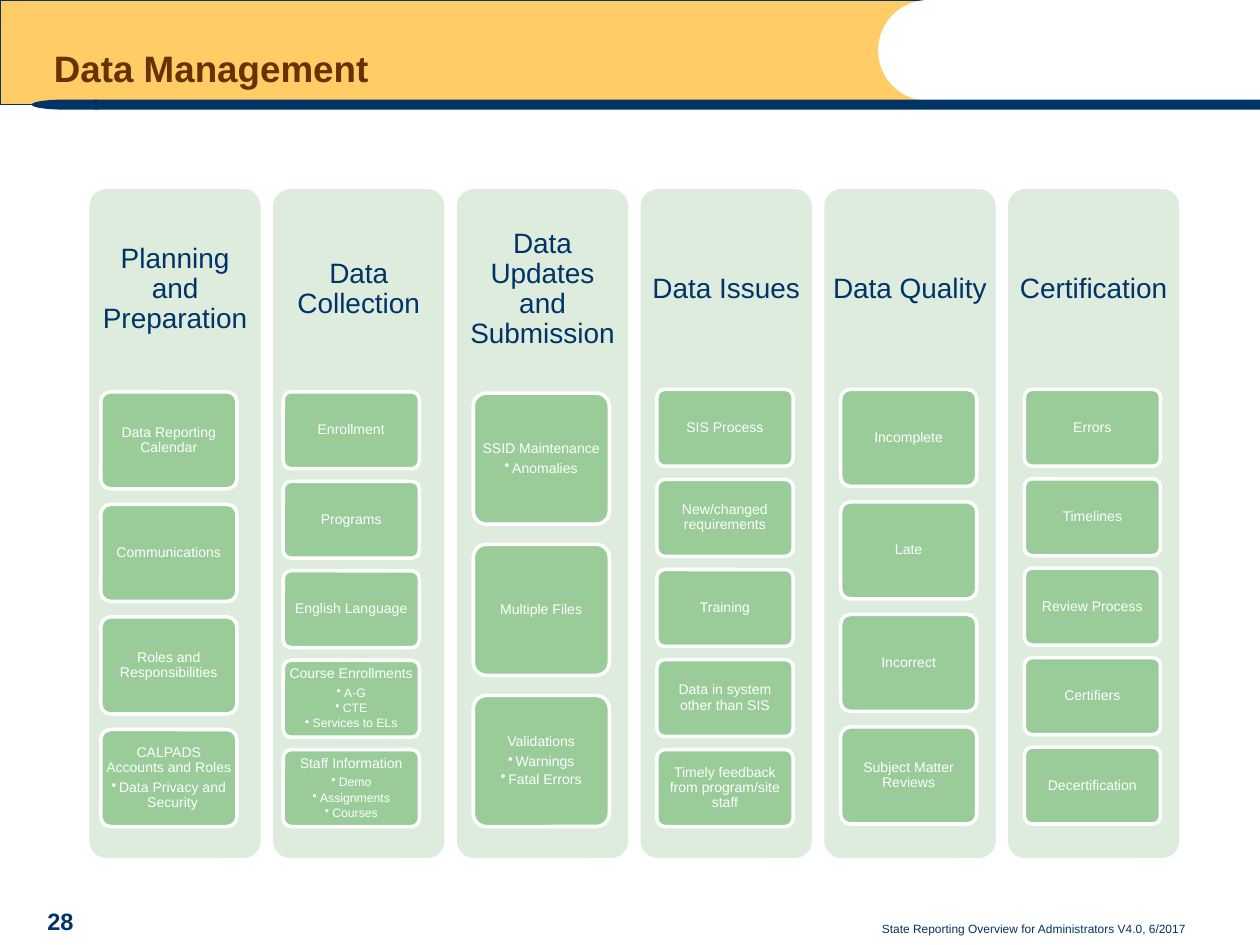
from lxml.etree import SubElement
from pptx import Presentation
from pptx.dml.color import RGBColor
from pptx.enum.shapes import MSO_SHAPE as Shape
from pptx.enum.text import MSO_ANCHOR as Anchor, PP_ALIGN as Align
from pptx.oxml.ns import qn
from pptx.util import Inches, Pt

COLORS = {
    "gold": "FFCC66", "navy": "003366", "brown": "663300",
    "white": "FFFFFF", "pale": "DEECDE", "green": "99CC99",
}
CARD_HIGH = {3: 1.04, 4: 0.77, 5: 0.61}

# Heading, card inset from the column's left, first and last card top from the
# column's top, and cards as (label, bullets).
COLUMNS = [
    ("Planning and Preparation", 0.09, 1.61, 4.29, [
        ("Data Reporting Calendar", []),
        ("Communications", []),
        ("Roles and Responsibilities", []),
        ("CALPADS Accounts and Roles", ["Data Privacy and Security"])]),
    ("Data Collection", 0.08, 1.61, 4.45, [
        ("Enrollment", []),
        ("Programs", []),
        ("English Language", []),
        ("Course Enrollments", ["A-G", "CTE", "Services to ELs"]),
        ("Staff Information", ["Demo", "Assignments", "Courses"])]),
    ("Data Updates and Submission", 0.13, 1.62, 4.02, [
        ("SSID Maintenance", ["Anomalies"]),
        ("Multiple Files", []),
        ("Validations", ["Warnings", "Fatal Errors"])]),
    ("Data Issues", 0.13, 1.59, 4.45, [
        ("SIS Process", []),
        ("New/changed requirements", []),
        ("Training", []),
        ("Data in system other than SIS", []),
        ("Timely feedback from program/site staff", [])]),
    ("Data Quality", 0.13, 1.59, 4.27, [
        ("Incomplete", []),
        ("Late", []),
        ("Incorrect", []),
        ("Subject Matter Reviews", [])]),
    ("Certification", 0.13, 1.59, 4.43, [
        ("Errors", []),
        ("Timelines", []),
        ("Review Process", []),
        ("Certifiers", []),
        ("Decertification", [])]),
]


def color(name):
    return RGBColor.from_string(COLORS[name])


def add_box(slide, kind, box, fill, line=None, width=0.75, adj=None):
    shape = slide.shapes.add_shape(kind, *map(Inches, box))
    shape.shadow.inherit = False
    shape.fill.solid()
    shape.fill.fore_color.rgb = color(fill)
    if line:
        shape.line.color.rgb = color(line)
        shape.line.width = Pt(width)
    else:
        shape.line.fill.background()
    if adj is not None:
        shape.adjustments[0] = adj
    return shape


def set_frame(shape, anchor, inset=None):
    frame = shape.text_frame
    frame.word_wrap = True
    frame.vertical_anchor = anchor
    if inset is not None:
        for side in ("left", "top", "right", "bottom"):
            setattr(frame, f"margin_{side}", Inches(inset))
    return frame


def write(para, text, font, **layout):
    """Fill a paragraph; font is (size, colour, bold)."""
    for key, value in layout.items():
        setattr(para, key, value)
    run = para.add_run()
    run.text = text
    size, tint, bold = font
    for key, value in {"name": "Arial", "size": Pt(size), "bold": bold}.items():
        setattr(run.font, key, value)
    run.font.color.rgb = color(tint)


def add_label(slide, box, text, font, anchor=Anchor.BOTTOM, inset=None, **layout):
    shape = slide.shapes.add_textbox(*map(Inches, box))
    frame = set_frame(shape, anchor, inset)
    write(frame.paragraphs[0], text, font, **layout)


def add_bullet(para):
    props = para._p.get_or_add_pPr()
    indent = Inches(0.06)
    props.set("marL", str(indent))
    props.set("indent", str(-indent))
    SubElement(props, qn("a:buChar")).set("char", "•")


def add_banner(slide, box, title):
    left, top, wide, high = box
    bar = top + high - 0.08
    add_box(slide, Shape.RECTANGLE, (left, top, 7.33, high - 0.04), "gold", "navy")
    add_box(slide, Shape.OVAL, (left + 6.97, top, 0.8, 0.8), "white")
    add_box(slide, Shape.RECTANGLE, (left + 0.75, bar, wide - 0.75, 0.08), "navy")
    cap = add_box(slide, Shape.FLOWCHART_DELAY, (left + 0.25, bar, 0.52, 0.08), "navy")
    cap.rotation = 180
    add_label(slide, (left + 0.33, top + 0.19, 6, 0.58), title,
              (21, "brown", True), line_spacing=0.9)


def add_card(slide, box, label, bullets):
    card = add_box(slide, Shape.ROUNDED_RECTANGLE, box, "green", "white", 2, 0.1)
    frame = set_frame(card, Anchor.MIDDLE, 0.02)
    layout = {"alignment": Align.CENTER, "line_spacing": 0.9}
    write(frame.paragraphs[0], label, (8, "white", False),
          space_after=Pt(2.8), **layout)
    size = 7 if len(bullets) > 2 else 8
    for text in bullets:
        para = frame.add_paragraph()
        add_bullet(para)
        write(para, text, (size, "white", False), level=1,
              space_after=Pt(1.2), **layout)


def add_column(slide, box, heading, inset, first, last, cards):
    left, top, wide, high = box
    add_box(slide, Shape.ROUNDED_RECTANGLE, box, "pale", adj=0.1)
    add_label(slide, (left, top, wide, 0.3 * high), heading, (16, "navy", False),
              Anchor.MIDDLE, 0.07, alignment=Align.CENTER, line_spacing=0.9)
    step = (last - first) / (len(cards) - 1)
    for row, (label, bullets) in enumerate(cards):
        place = (left + inset, top + first + row * step, 1.08, CARD_HIGH[len(cards)])
        add_card(slide, place, label, bullets)


def add_columns(slide, box):
    left, top, wide, high = box
    width = 1.36
    step = (wide - width) / (len(COLUMNS) - 1)
    for index, column in enumerate(COLUMNS):
        add_column(slide, (left + index * step, top, width, high), *column)


def add_footer(slide, box, number, note):
    left, top, wide, high = box
    add_label(slide, (left, top, 0.64, 0.37), number, (13.5, "navy", True),
              alignment=Align.CENTER)
    add_label(slide, (left + wide - 5.34, top + high - 0.27, 5.34, 0.27), note,
              (6.8, "navy", False), alignment=Align.RIGHT)


def main():
    deck = Presentation()
    deck.slide_width, deck.slide_height = Inches(10), Inches(7.5)
    slide = deck.slides.add_slide(deck.slide_layouts[6])
    add_banner(slide, (0, 0, 10, 0.87), "Data Management")
    add_footer(slide, (0.16, 7.1, 9.35, 0.38), "28",
               "State Reporting Overview for Administrators V4.0, 6/2017")
    add_columns(slide, (0.71, 1.5, 8.65, 5.31))
    deck.save("out.pptx")


if __name__ == "__main__":
    main()
